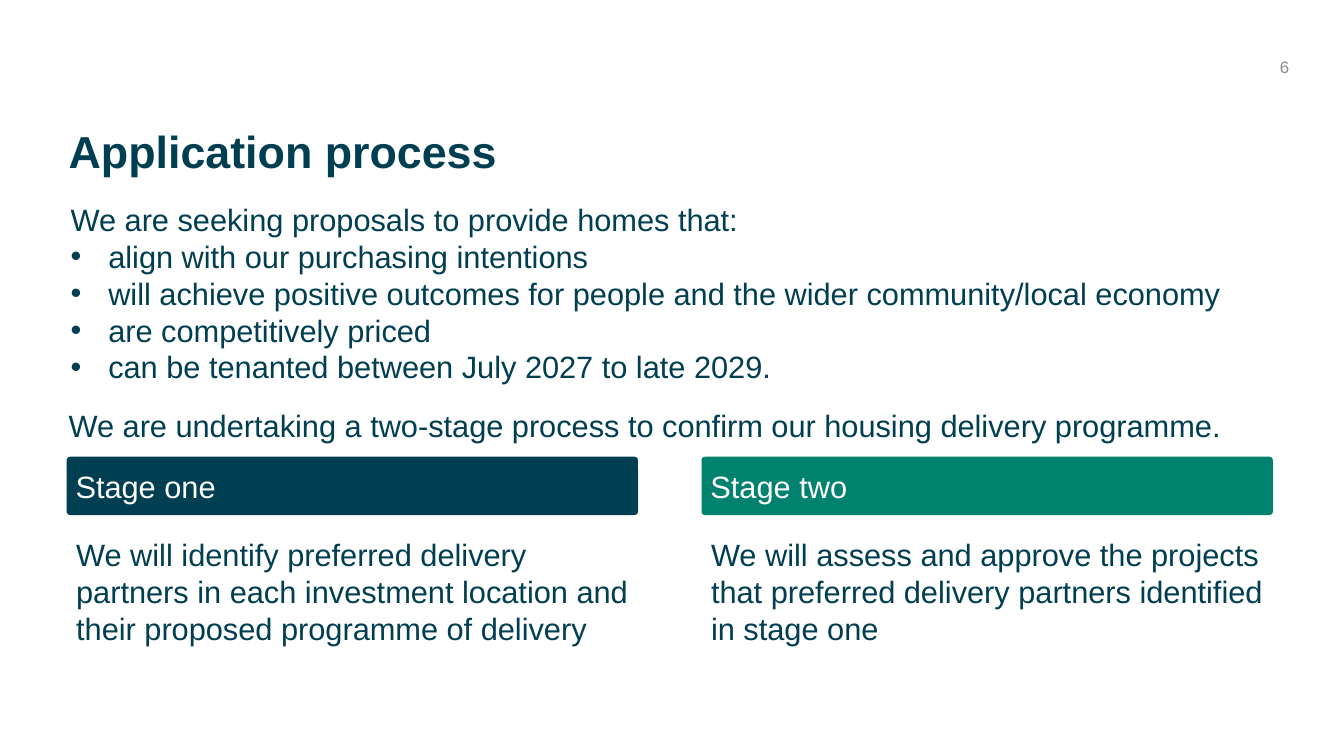
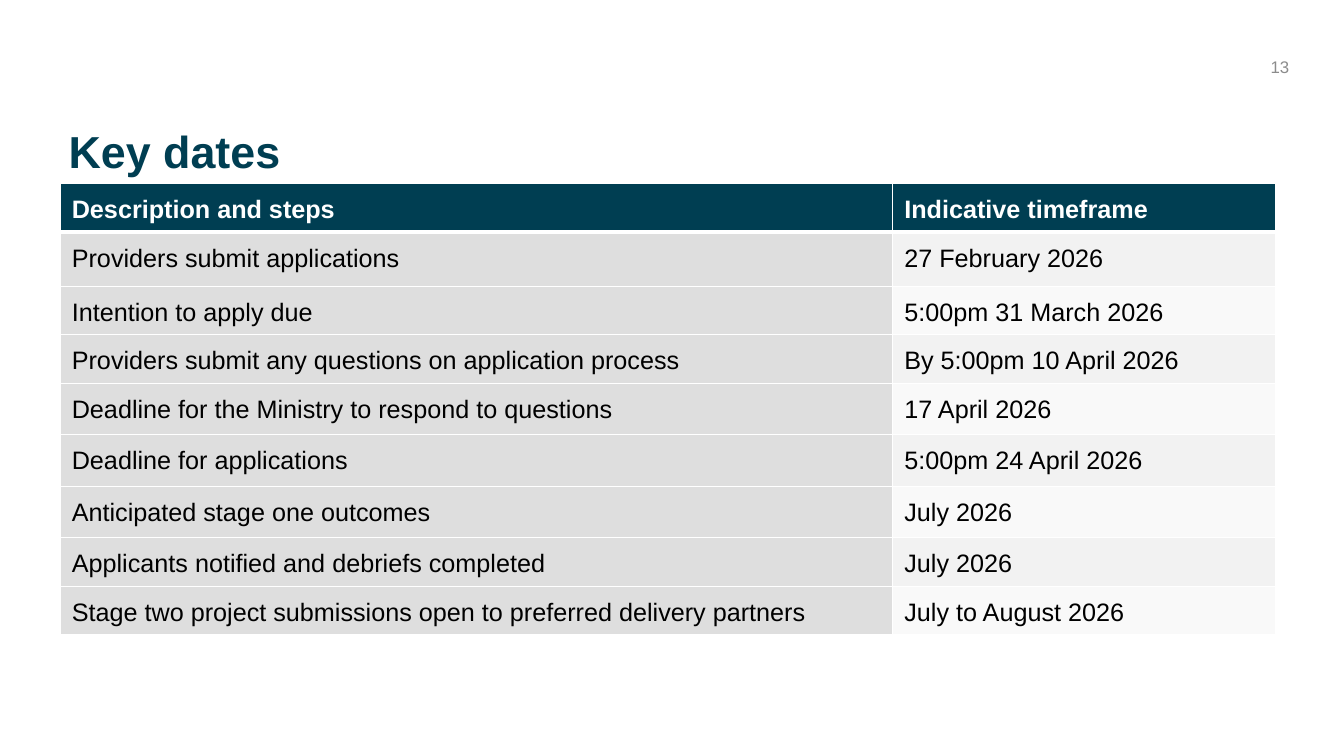
from dataclasses import dataclass

import lxml.etree
import pptx
import pptx.dml.color
import pptx.enum.shapes
import pptx.enum.text
import pptx.oxml.ns
import pptx.util

Cm = pptx.util.Cm
Pt = pptx.util.Pt
Color = pptx.dml.color.RGBColor
Align = pptx.enum.text.PP_ALIGN
Anchor = pptx.enum.text.MSO_ANCHOR
qn = pptx.oxml.ns.qn


@dataclass(frozen=True)
class Theme:
    font: str = "Arial"
    navy: Color = Color(0x00, 0x3E, 0x52)
    green: Color = Color(0x00, 0x82, 0x6E)
    white: Color = Color(0xFF, 0xFF, 0xFF)
    black: Color = Color(0x00, 0x00, 0x00)
    grey: Color = Color(0x8C, 0x8C, 0x8C)
    step_fill: Color = Color(0xDE, 0xDE, 0xDE)
    odd_fill: Color = Color(0xF2, 0xF2, 0xF2)
    even_fill: Color = Color(0xF9, 0xF9, 0xF9)
    title_size: int = 32
    body_size: int = 22
    table_size: int = 18
    number_size: int = 12


theme = Theme()


def write_text(frame, lines, size, color, bold=False, anchor=Anchor.TOP, insets=(0, 0, 0, 0)):
    frame.word_wrap = True
    frame.auto_size = pptx.enum.text.MSO_AUTO_SIZE.NONE
    frame.vertical_anchor = anchor
    frame.margin_left, frame.margin_top, frame.margin_right, frame.margin_bottom = map(Cm, insets)
    for index, line in enumerate(lines):
        paragraph = frame.add_paragraph() if index else frame.paragraphs[0]
        paragraph.alignment = Align.LEFT
        run = paragraph.add_run()
        run.text = line
        run.font.name = theme.font
        run.font.size = Pt(size)
        run.font.bold = bold
        run.font.color.rgb = color


def add_titled_slide(title, number):
    slide = presentation.slides.add_slide(presentation.slide_layouts[5])
    shape = slide.shapes.title
    shape.left, shape.top, shape.width, shape.height = Cm(1.73), Cm(3.15), Cm(30.4), Cm(1.47)
    write_text(shape.text_frame, [title], theme.title_size, theme.navy, True, Anchor.MIDDLE)
    shape.text_frame.paragraphs[0].line_spacing = 0.9
    number_box = slide.shapes.add_textbox(Cm(31.17), Cm(1.17), Cm(1.57), Cm(1.02))
    write_text(number_box.text_frame, [number], theme.number_size, theme.grey,
               anchor=Anchor.MIDDLE, insets=(0.25, 0.13, 0.25, 0.13))
    number_box.text_frame.paragraphs[0].alignment = Align.RIGHT
    return slide


presentation = pptx.Presentation()
presentation.slide_width = Cm(33.87)
presentation.slide_height = Cm(19.05)

slide = add_titled_slide("Application process", "6")

proposals = slide.shapes.add_textbox(Cm(1.78), Cm(5.05), Cm(30.35), Cm(4.9))
write_text(proposals.text_frame, [
    "We are seeking proposals to provide homes that:",
    "align with our purchasing intentions",
    "will achieve positive outcomes for people and the wider community/local economy",
    "are competitively priced",
    "can be tenanted between July 2027 to late 2029.",
], theme.body_size, theme.navy)
for paragraph in proposals.text_frame.paragraphs[1:]:
    properties = paragraph._p.get_or_add_pPr()
    properties.set("marL", str(Cm(0.95)))
    properties.set("indent", str(-Cm(0.95)))
    lxml.etree.SubElement(properties, qn("a:buFont"), typeface=theme.font)
    lxml.etree.SubElement(properties, qn("a:buChar"), char="•")

process = slide.shapes.add_textbox(Cm(1.73), Cm(10.26), Cm(30.4), Cm(1.47))
write_text(process.text_frame,
           ["We are undertaking a two-stage process to confirm our housing delivery programme."],
           theme.body_size, theme.navy)

stages = [
    ("Stage one", theme.navy,
     "We will identify preferred delivery partners in each investment location "
     "and their proposed programme of delivery"),
    ("Stage two", theme.green,
     "We will assess and approve the projects that preferred delivery partners "
     "identified in stage one"),
]
for index, (name, color, description) in enumerate(stages):
    left = 1.68 + index * 16
    band = slide.shapes.add_shape(pptx.enum.shapes.MSO_SHAPE.ROUNDED_RECTANGLE,
                                  Cm(left), Cm(11.51), Cm(14.4), Cm(1.47))
    band.adjustments[0] = 0.06
    band.shadow.inherit = False
    band.fill.solid()
    band.fill.fore_color.rgb = color
    band.line.fill.background()
    write_text(band.text_frame, [name], theme.body_size, theme.white,
               anchor=Anchor.MIDDLE, insets=(0.2, 0, 0, 0))
    detail = slide.shapes.add_textbox(Cm(left + 0.04), Cm(13.49), Cm(14.4), Cm(3.5))
    write_text(detail.text_frame, [description], theme.body_size, theme.navy,
               insets=(0.2, 0, 0.1, 0))

slide = add_titled_slide("Key dates", "13")

key_dates = [
    ("Description and steps", "Indicative timeframe", 1.17),
    ("Providers submit applications", "27 February 2026", 1.37),
    ("Intention to apply due", "5:00pm 31 March 2026", 1.17),
    ("Providers submit any questions on application process", "By 5:00pm 10 April 2026", 1.17),
    ("Deadline for the Ministry to respond to questions", "17 April 2026", 1.3),
    ("Deadline for applications", "5:00pm 24 April 2026", 1.3),
    ("Anticipated stage one outcomes", "July 2026", 1.3),
    ("Applicants notified and debriefs completed", "July 2026", 1.17),
    ("Stage two project submissions open to preferred delivery partners", "July to August 2026", 1.17),
]
table = slide.shapes.add_table(len(key_dates), 2, Cm(1.51), Cm(4.63), Cm(30.63), Cm(11.12)).table
table.columns[0].width = Cm(20.98)
table.columns[1].width = Cm(9.65)

for row, (step, timeframe, height) in enumerate(key_dates):
    table.rows[row].height = Cm(height)
    is_header = row == 0
    date_fill = theme.odd_fill if row % 2 else theme.even_fill
    fills = (theme.navy, theme.navy) if is_header else (theme.step_fill, date_fill)
    border_widths = {"lnL": 1, "lnR": 1, "lnT": 3 if row == 1 else 1, "lnB": 3 if is_header else 1}
    for column, text in enumerate((step, timeframe)):
        cell = table.cell(row, column)
        write_text(cell.text_frame, [text], theme.table_size,
                   theme.white if is_header else theme.black, is_header)
        cell.margin_left = cell.margin_right = Cm(0.3)
        cell.margin_top = cell.margin_bottom = Cm(0.2)
        paragraph = cell.text_frame.paragraphs[0]
        paragraph.line_spacing = 1.15
        paragraph.space_after = Pt(6)
        properties = cell._tc.get_or_add_tcPr()
        for side, width in border_widths.items():
            border = lxml.etree.SubElement(properties, qn("a:" + side), w=str(Pt(width)))
            border_fill = lxml.etree.SubElement(border, qn("a:solidFill"))
            lxml.etree.SubElement(border_fill, qn("a:srgbClr"), val=str(theme.white))
        cell.fill.solid()
        cell.fill.fore_color.rgb = fills[column]

presentation.save("out.pptx")
